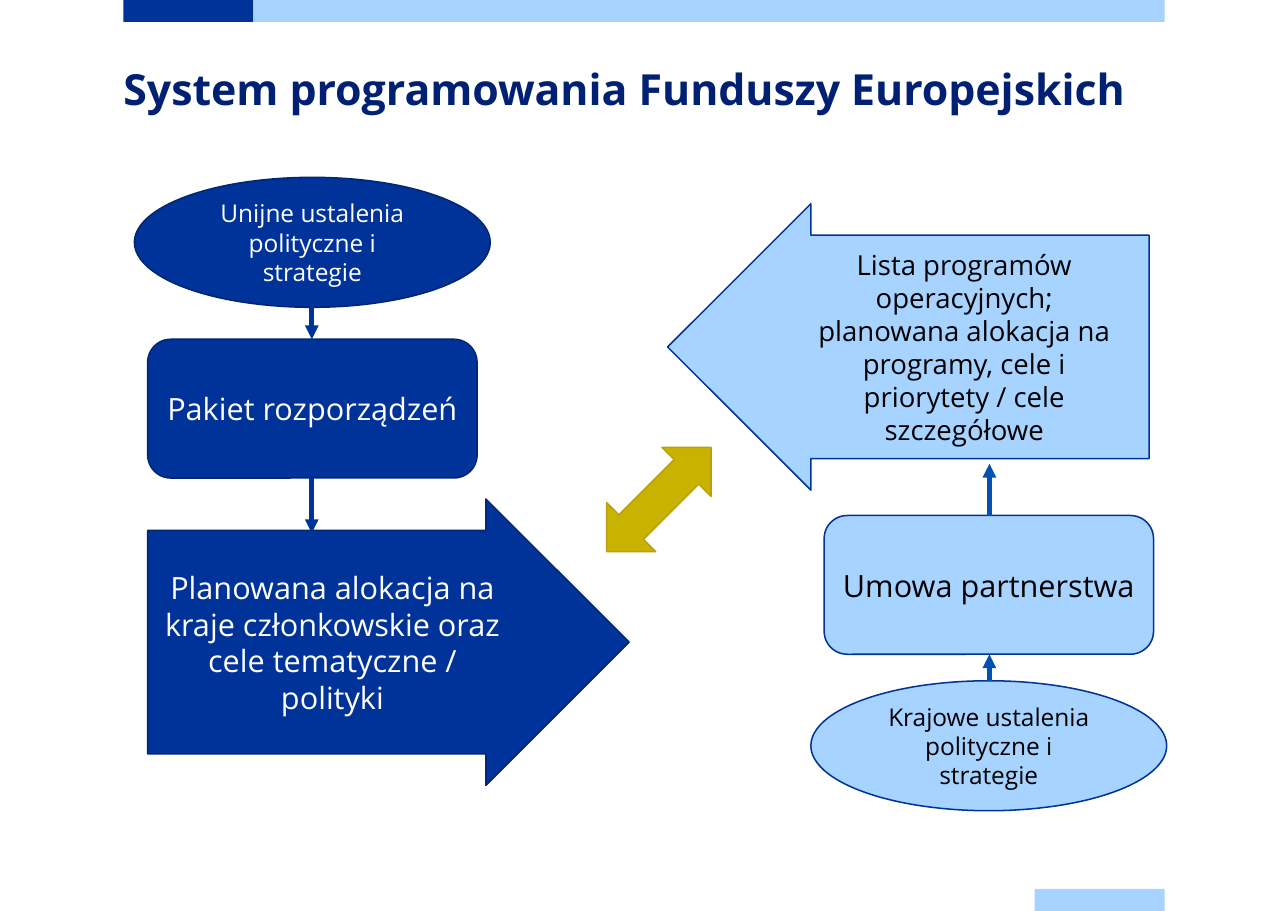
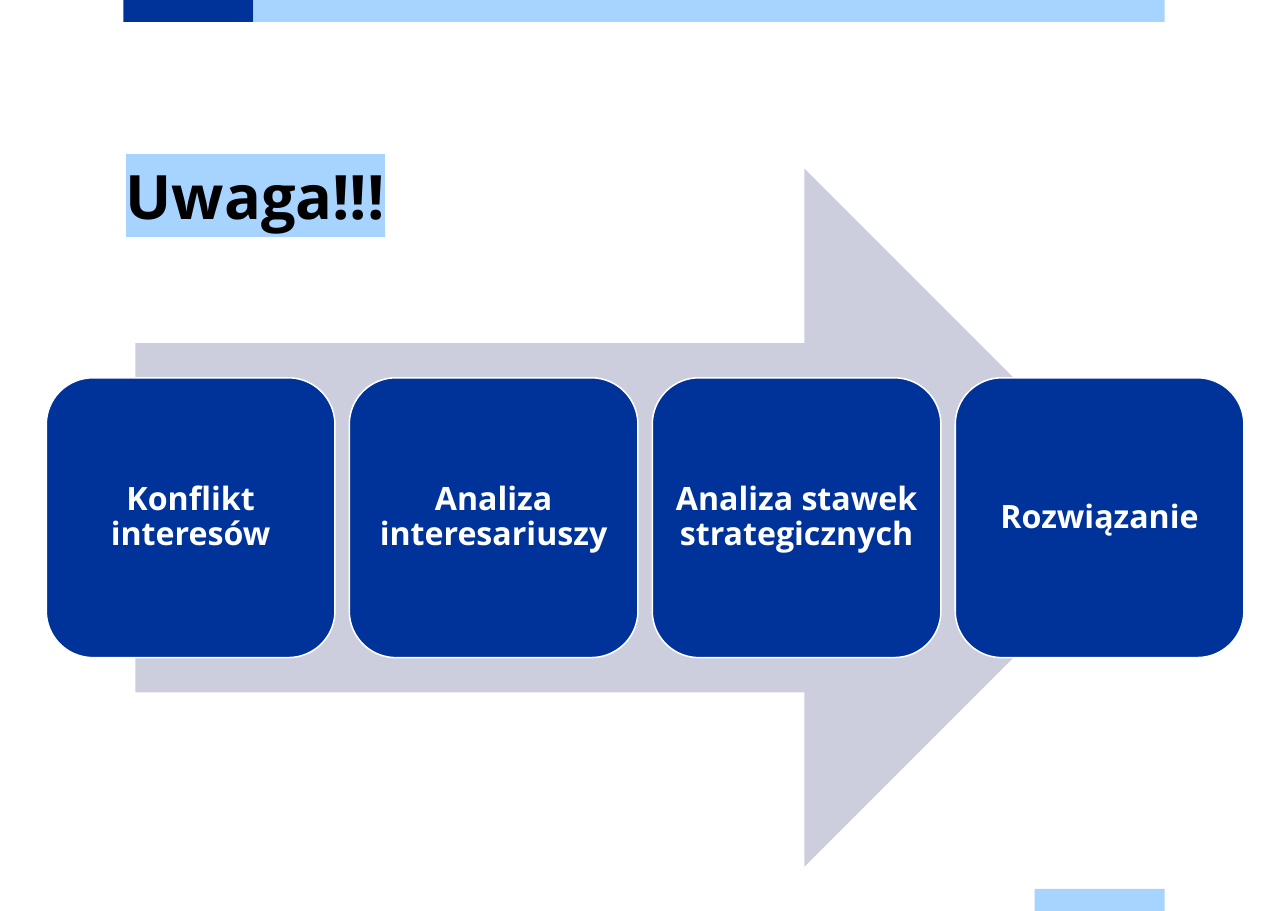
from lxml.etree import SubElement
from pptx import Presentation
from pptx.dml.color import RGBColor
from pptx.enum.shapes import MSO_CONNECTOR, MSO_SHAPE
from pptx.enum.text import MSO_ANCHOR, MSO_AUTO_SIZE, PP_ALIGN
from pptx.oxml.ns import qn
from pptx.util import Pt

PX = 9144  # 100 px to the inch
FONT = "Open Sans"
NAVY, DARK_NAVY, TITLE_BLUE = "003399", "002671", "002073"
SKY, MID_BLUE, GREY = "A6D3FF", "0051B0", "CCCEDE"
GOLD, DARK_GOLD = "C8B300", "BD9E12"
WHITE, BLACK = "FFFFFF", "000000"
rgb = RGBColor.from_string


def write_text(shape, lines, size, color, bold=False, spacing=None,
               align=PP_ALIGN.CENTER, margins=(10, 5)):
    """Fill a shape with one paragraph per line, centred vertically."""
    frame = shape.text_frame
    frame.word_wrap = True
    frame.auto_size = MSO_AUTO_SIZE.NONE
    frame.vertical_anchor = MSO_ANCHOR.MIDDLE
    frame.margin_left = frame.margin_right = margins[0] * PX
    frame.margin_top = frame.margin_bottom = margins[1] * PX
    frame.text = "\n".join(lines)
    for paragraph in frame.paragraphs:
        paragraph.alignment = align
        paragraph.line_spacing = spacing
        font = paragraph.font
        font.name, font.size, font.bold = FONT, Pt(size), bold
        font.color.rgb = rgb(color)


def add_box(slide, kind, box, fill, line=None):
    """Add a preset shape; box is left, top, width, height in px."""
    shape = slide.shapes.add_shape(kind, *[length * PX for length in box])
    shape.shadow.inherit = False
    shape.fill.solid()
    shape.fill.fore_color.rgb = rgb(fill)
    if line:
        shape.line.color.rgb = rgb(line)
        shape.line.width = Pt(1)
    else:
        shape.line.fill.background()
    return shape


presentation = Presentation()
presentation.slide_width, presentation.slide_height = 1169 * PX, 827 * PX
title_only = presentation.slide_layouts[5]
system_slide = presentation.slides.add_slide(title_only)
warning_slide = presentation.slides.add_slide(title_only)

# Bands shared through the slide master
master_tree = presentation.slide_master.shapes.element
for box, fill in [
    ((112, 0, 118, 20), NAVY),
    ((230, 0, 827, 20), SKY),
    ((939, 807, 118, 20), SKY),
]:
    band = add_box(system_slide, MSO_SHAPE.RECTANGLE, box, fill)
    master_tree.append(band.element)

# Titles
for slide, text, box, size, color, spacing, margins in [
    (system_slide, "System programowania Funduszy Europejskich",
     (112, 51, 945, 55), 28, TITLE_BLUE, Pt(36), (0, 0)),
    (warning_slide, "Uwaga!!!", (104, 122, 260, 90), 40, BLACK, 1.3, (10, 5)),
]:
    title = slide.shapes.title
    title.left, title.top, title.width, title.height = [length * PX for length in box]
    write_text(title, [text], size, color, True, spacing, PP_ALIGN.LEFT, margins)

run = warning_slide.shapes.title.text_frame.paragraphs[0].runs[0]
highlight = SubElement(run.font._element, qn("a:highlight"))
SubElement(highlight, qn("a:srgbClr")).set("val", SKY)

# Slide 1: the European side in navy, the national side in light blue
eu_colors = NAVY, DARK_NAVY, WHITE
national_colors = SKY, NAVY, BLACK
for kind, box, (fill, line, color), size, lines in [
    (MSO_SHAPE.OVAL, (122, 161, 323, 118), eu_colors, 16,
     ["Unijne ustalenia polityczne i strategie"]),
    (MSO_SHAPE.OVAL, (736, 618, 323, 118), national_colors, 16,
     ["Krajowe ustalenia polityczne i strategie"]),
    (MSO_SHAPE.ROUNDED_RECTANGLE, (134, 308, 299, 126), eu_colors, 20,
     ["Pakiet rozporządzeń"]),
    (MSO_SHAPE.ROUNDED_RECTANGLE, (748, 468, 299, 126), national_colors, 20,
     ["Umowa partnerstwa"]),
    (MSO_SHAPE.RIGHT_ARROW, (134, 453, 437, 260), eu_colors, 20,
     ["Planowana alokacja na kraje członkowskie oraz cele tematyczne / polityki"]),
    (MSO_SHAPE.LEFT_ARROW, (606, 185, 437, 260), national_colors, 18,
     ["Lista programów operacyjnych;",
      "planowana alokacja na programy, cele i priorytety / cele szczegółowe"]),
]:
    shape = add_box(system_slide, kind, box, fill, line)
    if kind in (MSO_SHAPE.RIGHT_ARROW, MSO_SHAPE.LEFT_ARROW):
        shape.adjustments[0] = 0.78
    write_text(shape, lines, size, color)

for x, start, end, color in [
    (283, 279, 308, NAVY),
    (283, 434, 484, NAVY),
    (898, 618, 594, MID_BLUE),
    (898, 468, 421, MID_BLUE),
]:
    connector = system_slide.shapes.add_connector(
        MSO_CONNECTOR.STRAIGHT, x * PX, start * PX, x * PX, end * PX)
    connector.line.color.rgb = rgb(color)
    connector.line.width = Pt(3)
    properties = connector.element.spPr
    SubElement(properties.find(qn("a:ln")), qn("a:tailEnd")).set("type", "triangle")
    SubElement(properties, qn("a:effectLst"))

exchange_arrow = add_box(system_slide, MSO_SHAPE.LEFT_RIGHT_ARROW,
                         (531, 422, 134, 63), GOLD, DARK_GOLD)
exchange_arrow.rotation = 315

# Slide 2: four steps along an arrow
add_box(warning_slide, MSO_SHAPE.RIGHT_ARROW, (123, 153, 924, 634), GREY)
steps = ["Konflikt interesów", "Analiza interesariuszy",
         "Analiza stawek strategicznych", "Rozwiązanie"]
for index, step in enumerate(steps):
    card = add_box(warning_slide, MSO_SHAPE.ROUNDED_RECTANGLE,
                   (42 + index * 275, 343, 262, 254), NAVY, WHITE)
    write_text(card, [step], 21, WHITE, True, 0.9, margins=(8, 8))

presentation.save("out.pptx")
